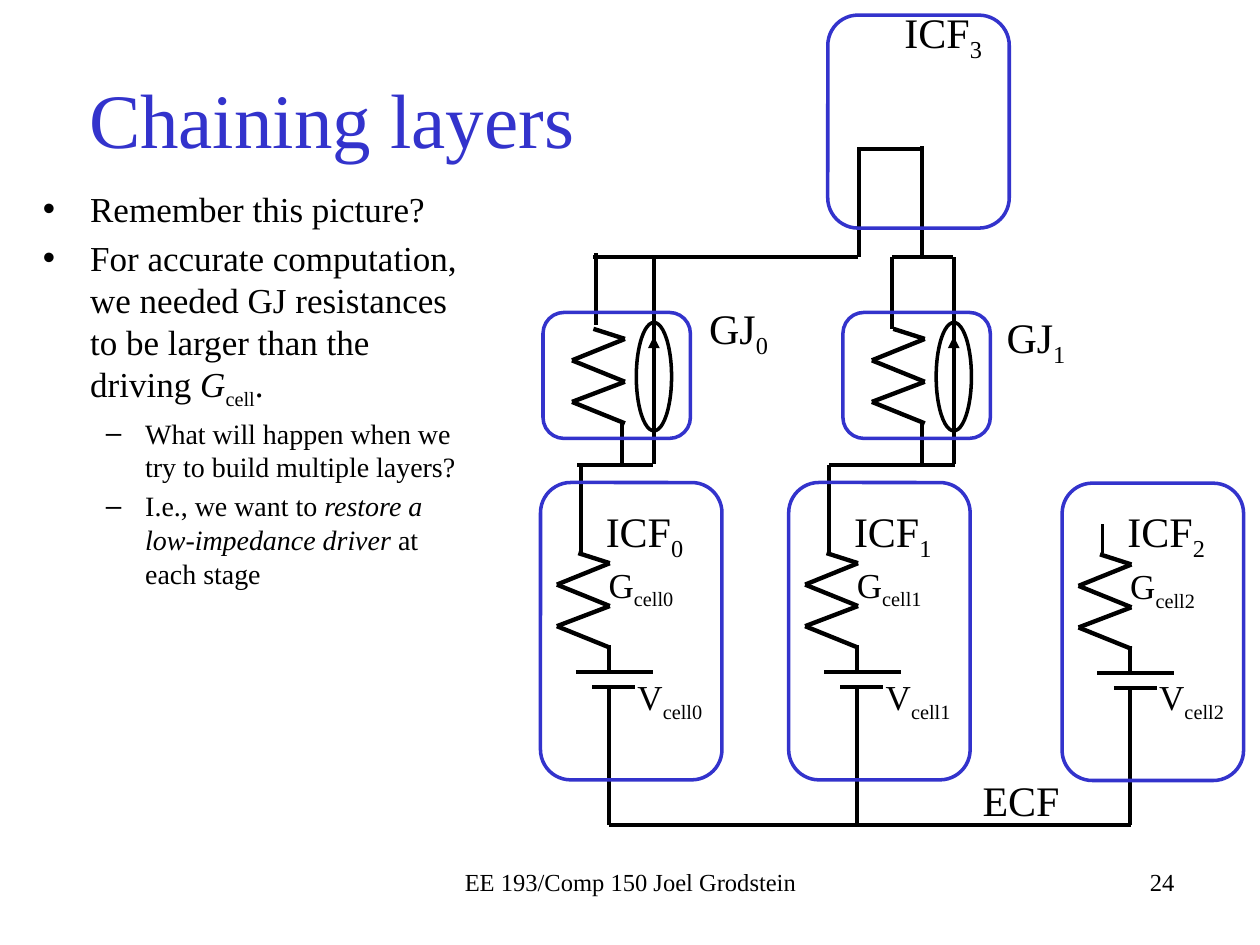
from pptx import Presentation
from pptx.util import Inches, Pt
from pptx.dml.color import RGBColor
from pptx.enum.shapes import MSO_CONNECTOR, MSO_SHAPE
from pptx.enum.text import MSO_ANCHOR, MSO_AUTO_SIZE, PP_ALIGN
from pptx.oxml.ns import qn
from lxml.etree import SubElement

BLUE = RGBColor(0x33, 0x33, 0xCC)
BLACK = RGBColor(0, 0, 0)
FONT = "Times New Roman"

prs = Presentation()
prs.slide_width, prs.slide_height = Inches(10), Inches(7.5)
s = prs.slides.add_slide(prs.slide_layouts[1])


def add_runs(p, size, *parts, color=BLACK):
    """Add runs given as (text, style), style being "", "i" or "sub"."""
    for text, style in parts:
        r = p.add_run()
        r.text = text
        r.font.name, r.font.size = FONT, Pt(size)
        r.font.color.rgb = color
        if style == "i":
            r.font.italic = True
        elif style == "sub":
            r.font._element.set("baseline", "-25000")


def add_line(x1, y1, x2, y2, width=2.25, arrow=False):
    c = s.shapes.add_connector(MSO_CONNECTOR.STRAIGHT, Inches(x1), Inches(y1),
                               Inches(x2), Inches(y2))
    c.line.color.rgb, c.line.width = BLACK, Pt(width)
    if arrow:
        SubElement(c.line._get_or_add_ln(), qn("a:tailEnd"), type="triangle")
    SubElement(c._element.spPr, qn("a:effectLst"))


# Title
title = s.shapes.title
title.left, title.top = Inches(0.23), Inches(0.31)
title.width, title.height = Inches(4.81), Inches(1.25)
tf = title.text_frame
tf.vertical_anchor = MSO_ANCHOR.MIDDLE
tf.paragraphs[0].alignment = PP_ALIGN.CENTER
add_runs(tf.paragraphs[0], 44, ("Chaining layers", ""), color=BLUE)

# Bullet list
body = s.placeholders[1]
body.left, body.top = Inches(0.24), Inches(1.44)
body.width, body.height = Inches(3.53), Inches(5.17)
tf = body.text_frame
tf.auto_size = MSO_AUTO_SIZE.NONE
bullets = [
    (0, [("Remember this picture?", "")]),
    (0, [("For accurate computation, we needed GJ resistances to be larger "
          "than the driving ", ""), ("G", "i"), ("cell", "sub"), (".", "")]),
    (1, [("What will happen when we try to build multiple layers?", "")]),
    (1, [("I.e., we want to ", ""), ("restore a low-impedance driver", "i"),
         (" at each stage", "")]),
]
for i, (level, parts) in enumerate(bullets):
    p = tf.add_paragraph() if i else tf.paragraphs[0]
    p.level = level
    add_runs(p, 16 if level else 20, *parts)

# Parts gathered while laying out the circuit
zigzags = []   # left, top
outlines = []  # shape, left, top, width, height, color
labels = []    # left, top, width, height, size, inset, align, text, subscript

# Cells: battery, resistor and wires inside a rounded box
for i, (x, dy, wire_top) in enumerate([(4.29, 0, 3.69), (6.26, 0, 3.69),
                                       (8.43, 0.01, 4.16)]):
    add_line(x + 0.28, 5.33 + dy, x + 0.89, 5.33 + dy)
    add_line(x + 0.41, 5.45 + dy, x + 0.75, 5.45 + dy)
    add_line(x + 0.54, 5.46 + dy, x + 0.54, 6.55)
    add_line(x + 0.54, 5.12 + dy, x + 0.54, 5.34 + dy)
    add_line(x + 0.32, wire_top, x + 0.32, 4.38 + dy)
    zigzags.append((x + 0.13, 4.39 + dy))
    outlines.append((MSO_SHAPE.ROUNDED_RECTANGLE, x, 3.83 + dy / 2, 1.44, 2.36, BLUE))
    labels += [
        (x + 0.42, 3.96, 0.87, 0.5, 24, 0.1, PP_ALIGN.LEFT, "ICF", str(i)),
        (x + 0.54, 4.47 + dy, 0.57, 0.34, 20, 0, PP_ALIGN.LEFT, "G", f"cell{i}"),
        (x + 0.77, 5.36, 0.57, 0.34, 20, 0, PP_ALIGN.LEFT, "V", f"cell{i}"),
    ]

# Gap junctions: resistor beside a current source
for i, (x, label_x, label_y) in enumerate([(4.31, 5.53, 2.35), (6.69, 7.89, 2.42)]):
    add_line(x + 0.88, 3.68, x + 0.88, 2.67, arrow=True)
    add_line(x + 0.88, 2.04, x + 0.88, 2.91)
    add_line(x + 0.63, 3.34, x + 0.63, 3.68)
    zigzags.append((x + 0.23, 2.61))
    outlines += [(MSO_SHAPE.OVAL, x + 0.74, 2.56, 0.28, 0.86, BLACK),
                 (MSO_SHAPE.ROUNDED_RECTANGLE, x, 2.48, 1.17, 1, BLUE)]
    labels.append((label_x, label_y, 0.74, 0.5, 24, 0.1, PP_ALIGN.LEFT, "GJ", str(i)))

# Resistors
ZIGZAG = [(0.17, 0), (0.42, 0.08), (0, 0.25), (0.42, 0.42), (0, 0.58), (0.42, 0.75)]
for x, y in zigzags:
    for (x1, y1), (x2, y2) in zip(ZIGZAG, ZIGZAG[1:]):
        add_line(x + x1, y + y1, x + x2, y + y2, width=2.5)

# Wires joining the layers
for wire in [
    (4.83, 6.55, 8.98, 6.55),
    (4.58, 3.69, 5.18, 3.69), (6.58, 3.69, 7.58, 3.69),
    (4.73, 2.01, 4.73, 2.58), (7.08, 2.04, 7.08, 2.61),
    (4.71, 2.04, 6.81, 2.04), (7.08, 2.04, 7.56, 2.04),
    (6.82, 1.17, 6.82, 2.04), (7.32, 1.16, 7.32, 2.03),
    (6.83, 1.18, 7.31, 1.18),
]:
    add_line(*wire)

# Outlines, with the box of the next layer on top
outlines.append((MSO_SHAPE.ROUNDED_RECTANGLE, 6.57, 0.12, 1.44, 1.69, BLUE))
for kind, x, y, w, h, color in outlines:
    sp = s.shapes.add_shape(kind, Inches(x), Inches(y), Inches(w), Inches(h))
    sp.shadow.inherit = False
    sp.fill.background()
    sp.line.color.rgb, sp.line.width = color, Pt(2)

# Labels, footer and slide number
labels += [
    (7.08, 0, 0.87, 0.5, 24, 0.1, PP_ALIGN.LEFT, "ICF", "3"),
    (7.7, 6.1, 0.87, 0.5, 24, 0.1, PP_ALIGN.LEFT, "ECF", ""),
    (3.42, 6.83, 3.17, 0.34, 14, 0.1, PP_ALIGN.CENTER, "EE 193/Comp 150 Joel Grodstein", ""),
    (6.25, 6.83, 3.17, 0.5, 14, 0.1, PP_ALIGN.RIGHT, "24", ""),
]
for x, y, w, h, size, inset, align, text, sub in labels:
    tf = s.shapes.add_textbox(Inches(x), Inches(y), Inches(w), Inches(h)).text_frame
    tf.word_wrap = inset > 0
    tf.margin_left = tf.margin_right = Inches(inset)
    tf.margin_top = tf.margin_bottom = Inches(inset / 2)
    p = tf.paragraphs[0]
    p.alignment = align
    add_runs(p, size, (text, ""))
    if sub:
        add_runs(p, size, (sub, "sub"))

prs.save("out.pptx")
